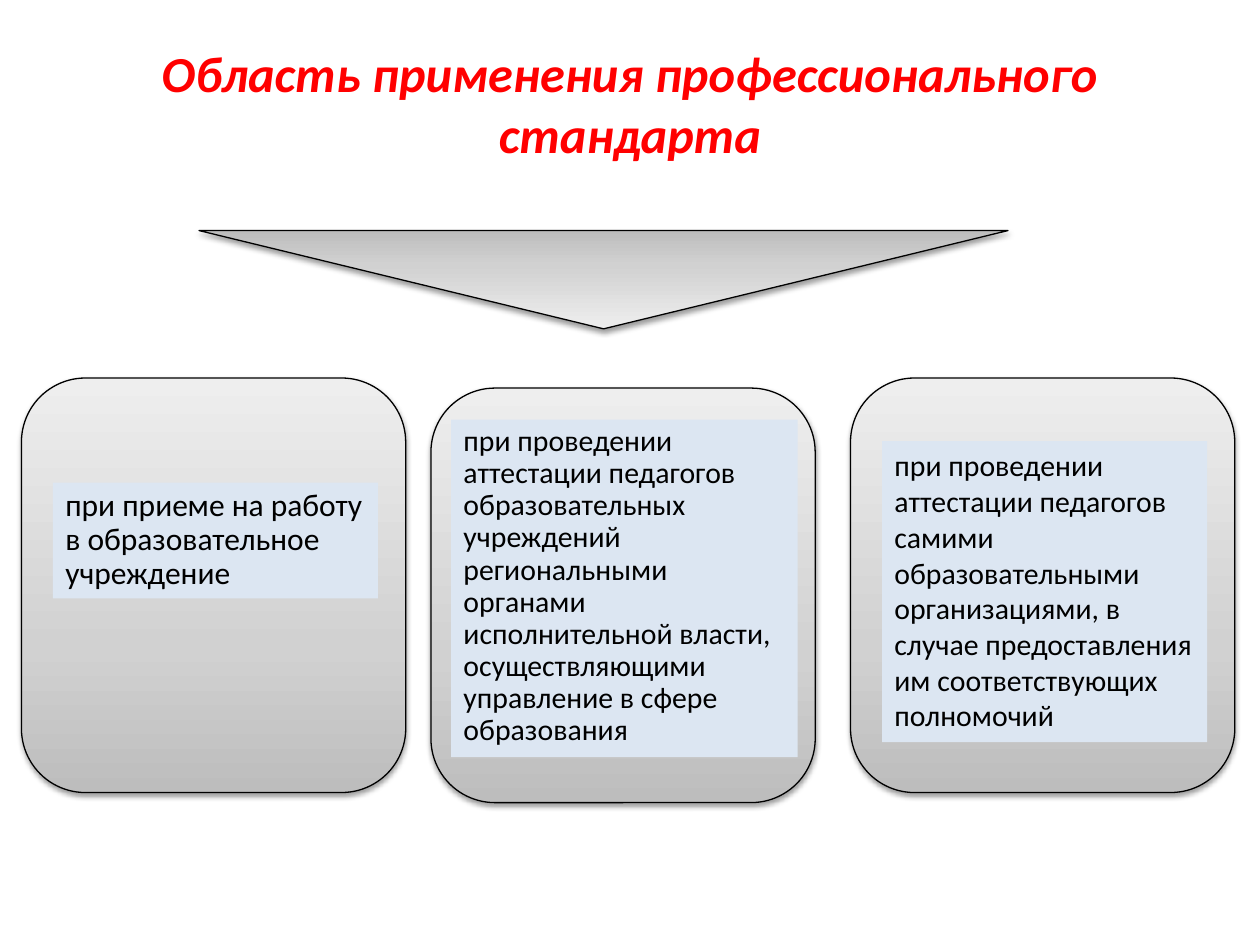
"""Builds a slide on where the professional standard applies."""
from lxml import etree
from pptx import Presentation
from pptx.dml.color import RGBColor
from pptx.enum.shapes import MSO_SHAPE
from pptx.enum.text import MSO_ANCHOR, PP_ALIGN
from pptx.oxml import parse_xml
from pptx.oxml.ns import qn
from pptx.util import Inches, Pt

RECT, TRIANGLE = MSO_SHAPE.RECTANGLE, MSO_SHAPE.ISOSCELES_TRIANGLE
PANEL = MSO_SHAPE.FLOWCHART_ALTERNATE_PROCESS
TOP, MIDDLE = MSO_ANCHOR.TOP, MSO_ANCHOR.MIDDLE
LEFT, CENTER = PP_ALIGN.LEFT, PP_ALIGN.CENTER

FONT = "Calibri"
COLORS = {"title": "FF0000", "text": "000000", "line": "000000", "label": "DCE6F2"}
GRADIENT = [(0, "BDBDBD"), (35, "D1D1D1"), (100, "EEEEEE")]
SHADOW = (
    '<a:outerShdw xmlns:a="http://schemas.openxmlformats.org/drawingml/2006/main" '
    'blurRad="40000" dist="20000" dir="5400000" rotWithShape="0">'
    '<a:srgbClr val="000000"><a:alpha val="38000"/></a:srgbClr></a:outerShdw>'
)

TITLE = "Область применения профессионального стандарта"
TITLE_BOX = (0.5, 0.3, 9, 1.03)
ARROW_BOX = (1.58, 1.83, 6.42, 0.78)
PANEL_SIZE = (3.05, 3.29)
CARDS = [
    {"panel": (0.17, 3), "label": (0.42, 3.83, 2.58, 0.92), "size": 18, "spacing": 0.9,
     "text": "при приеме на работу в образовательное учреждение"},
    {"panel": (3.42, 3.08), "label": (3.58, 3.33, 2.75, 2.68), "size": 17, "spacing": 0.9,
     "text": "при проведении аттестации педагогов образовательных учреждений "
             "региональными органами исполнительной власти, осуществляющими "
             "управление в сфере образования"},
    {"panel": (6.75, 3), "label": (7, 3.5, 2.58, 2.39), "size": 17, "spacing": 1.0,
     "text": "при проведении аттестации педагогов самими образовательными "
             "организациями, в случае предоставления им соответствующих полномочий"},
]


def rgb(name):
    return RGBColor.from_string(COLORS[name])


def inches(box):
    return [Inches(v) for v in box]


def add_gradient_shape(s, kind, box, rotation=0):
    sp = s.shapes.add_shape(kind, *inches(box))
    sp.rotation = rotation
    sp.fill.gradient()
    sp.fill.gradient_angle = 90
    stops = sp.fill._fill._gradFill.find(qn("a:gsLst"))
    for stop in list(stops):
        stops.remove(stop)
    for position, color in GRADIENT:
        stop = etree.SubElement(stops, qn("a:gs"), pos=str(position * 1000))
        etree.SubElement(stop, qn("a:srgbClr"), val=color)
    sp.line.color.rgb = rgb("line")
    sp.line.width = Pt(0.75)
    sp.shadow.inherit = False
    sp._element.spPr.find(qn("a:effectLst")).append(parse_xml(SHADOW))


def add_text(s, text, box, size, color="text", fill=None, bold=False, italic=False,
             align=LEFT, anchor=TOP, spacing=1.0):
    sp = s.shapes.add_shape(RECT, *inches(box)) if fill else s.shapes.add_textbox(*inches(box))
    if fill:
        sp.fill.solid()
        sp.fill.fore_color.rgb = rgb(fill)
        sp.line.fill.background()
        sp.shadow.inherit = False
    tf = sp.text_frame
    tf.word_wrap = True
    tf.vertical_anchor = anchor
    p = tf.paragraphs[0]
    p.alignment = align
    p.line_spacing = spacing
    r = p.add_run()
    r.text = text
    r.font.name = FONT
    r.font.size = Pt(size)
    r.font.bold = bold
    r.font.italic = italic
    r.font.color.rgb = rgb(color)


def main():
    prs = Presentation()
    prs.slide_width, prs.slide_height = Inches(10), Inches(7.5)
    s = prs.slides.add_slide(prs.slide_layouts[6])
    for card in CARDS:
        add_gradient_shape(s, PANEL, card["panel"] + PANEL_SIZE)
    add_text(s, TITLE, TITLE_BOX, 28.8, color="title", bold=True, italic=True,
             align=CENTER, anchor=MIDDLE)
    add_gradient_shape(s, TRIANGLE, ARROW_BOX, rotation=180)
    for card in CARDS:
        add_text(s, card["text"], card["label"], card["size"], fill="label",
                 spacing=card["spacing"])
    prs.save("out.pptx")


if __name__ == "__main__":
    main()
